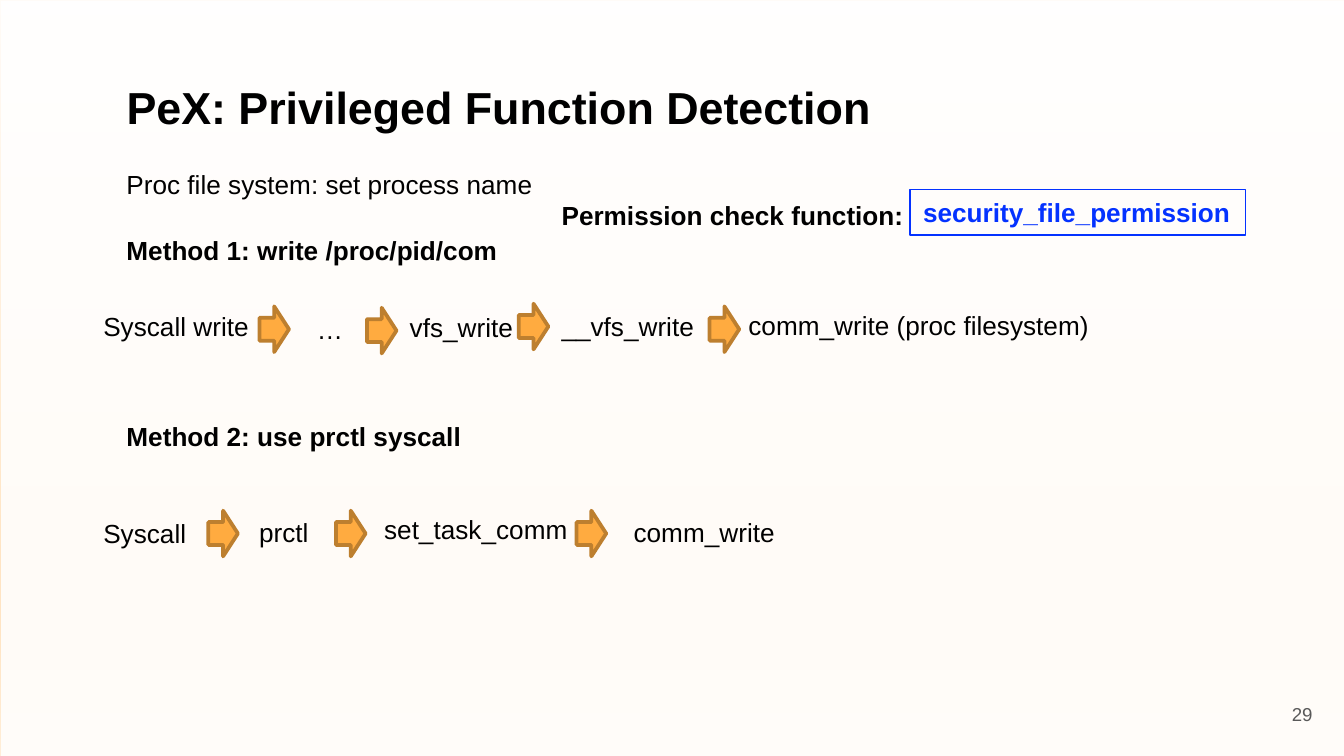
from dataclasses import dataclass

from lxml import etree
from pptx import Presentation
from pptx.dml import color
from pptx.enum import shapes, text
from pptx.oxml import ns
from pptx.util import Inches, Pt

COLS, ROWS = 100, 56.25
CELL = Inches(0.1)
LINE_H = 3.4
ARROW_W = 2.2
FONT = "Arial"
BLACK, BLUE, GREY, WHITE = "000000", "0432FF", "595959", "FFFFFF"
ORANGE, BROWN = "FFAB40", "BD7F2F"
BACKDROP = [(0, "FFFBF5"), (74, "FFD9A9"), (83, "FFD9A9"), (100, "FFE6C6")]


@dataclass
class Label:
    words: str
    col: float
    row: float
    width: float
    height: float = LINE_H
    size: float = 14
    bold: bool = False
    hue: str = BLACK
    align: text.PP_ALIGN = text.PP_ALIGN.LEFT


@dataclass
class Arrow:
    col: float
    row: float


LABELS = [
    Label("PeX: Privileged Function Detection", 8.43, 5.43, 57.9, 5, 24, True),
    Label("Proc file system: set process name", 8.43, 12.03, 32.4),
    Label("Method 1: write /proc/pid/com", 8.43, 16.96, 30.3, bold=True),
    Label("Method 2: use prctl syscall", 8.43, 30.8, 27, bold=True),
    Label("Permission check function:", 40.8, 14.36, 28.1, bold=True),
    Label("Syscall write", 6.7, 22.6, 12.9),
    Label("…", 22.6, 22.83, 4),
    Label("vfs_write", 29.5, 22.7, 9.8),
    Label("__vfs_write", 40.8, 22.6, 11.9),
    Label("comm_write (proc filesystem)", 54.7, 22.54, 27.5),
    Label("Syscall", 6.7, 38, 8.2),
    Label("prctl", 18.3, 37.9, 5.7),
    Label("set_task_comm", 27.6, 37.7, 15.7),
    Label("comm_write", 46.1, 37.9, 12.6, align=text.PP_ALIGN.CENTER),
]
ARROWS = [
    Arrow(19.3, 22.8), Arrow(27.3, 22.9), Arrow(38.6, 22.6), Arrow(52.8, 22.8),
    Arrow(15.5, 38), Arrow(25, 38), Arrow(42.9, 38),
]
CHECK = Label("security_file_permission", 67.7, 14.1, 25, bold=True, hue=BLUE)
PAGE = Label("29", 92.65, 51, 6, 4.3, 10, hue=GREY, align=text.PP_ALIGN.RIGHT)


def rgb(value: str) -> color.RGBColor:
    return color.RGBColor.from_string(value)


def box(*cells: float) -> list[int]:
    return [round(c * CELL) for c in cells]


def write(sp, label: Label) -> None:
    tf = sp.text_frame
    tf.word_wrap = False
    tf.auto_size = text.MSO_AUTO_SIZE.SHAPE_TO_FIT_TEXT
    tf.vertical_anchor = text.MSO_ANCHOR.TOP
    p = tf.paragraphs[0]
    p.text = label.words
    p.alignment = label.align
    p.font.name = FONT
    p.font.size = Pt(label.size)
    p.font.bold = label.bold
    p.font.color.rgb = rgb(label.hue)


def add_label(s, label: Label):
    sp = s.shapes.add_textbox(*box(label.col, label.row, label.width, label.height))
    write(sp, label)
    return sp


def add_block(s, kind, cells: list[int], fill: str = "", line: str = "", weight: float = 0):
    sp = s.shapes.add_shape(kind, *cells)
    sp.shadow.inherit = False
    if fill:
        sp.fill.solid()
        sp.fill.fore_color.rgb = rgb(fill)
    else:
        sp.fill.background()
    if line:
        sp.line.color.rgb = rgb(line)
        sp.line.width = Pt(weight)
    else:
        sp.line.fill.background()
    return sp


def paint_background(s) -> None:
    fill = s.background.fill
    fill.gradient()
    fill.gradient_angle = 270
    stops = s.element.xpath(".//a:gsLst")[0]
    for stop in list(stops):
        stops.remove(stop)
    for share, hue in BACKDROP:
        stop = etree.SubElement(stops, ns.qn("a:gs"), pos=str(share * 1000))
        etree.SubElement(stop, ns.qn("a:srgbClr"), val=hue)
    veil = add_block(s, shapes.MSO_SHAPE.RECTANGLE, box(0.06, 0.06, COLS, ROWS), WHITE)
    tint = veil.element.xpath("./p:spPr/a:solidFill/a:srgbClr")[0]
    etree.SubElement(tint, ns.qn("a:alpha"), val="91000")


def main() -> None:
    prs = Presentation()
    prs.slide_width, prs.slide_height = box(COLS, ROWS)
    s = prs.slides.add_slide(prs.slide_layouts[6])
    paint_background(s)

    page = add_label(s, PAGE).text_frame
    page.auto_size = text.MSO_AUTO_SIZE.NONE
    page.word_wrap = True
    page.vertical_anchor = text.MSO_ANCHOR.MIDDLE
    page.margin_top = page.margin_bottom = CELL

    for label in LABELS:
        add_label(s, label)
    for arrow in ARROWS:
        cells = box(arrow.col, arrow.row, ARROW_W, LINE_H)
        add_block(s, shapes.MSO_SHAPE.RIGHT_ARROW, cells, ORANGE, BROWN, 2)

    cells = box(CHECK.col, CHECK.row, CHECK.width, CHECK.height)
    write(add_block(s, shapes.MSO_SHAPE.RECTANGLE, cells, line=BLUE, weight=0.75), CHECK)
    prs.save("out.pptx")


if __name__ == "__main__":
    main()
